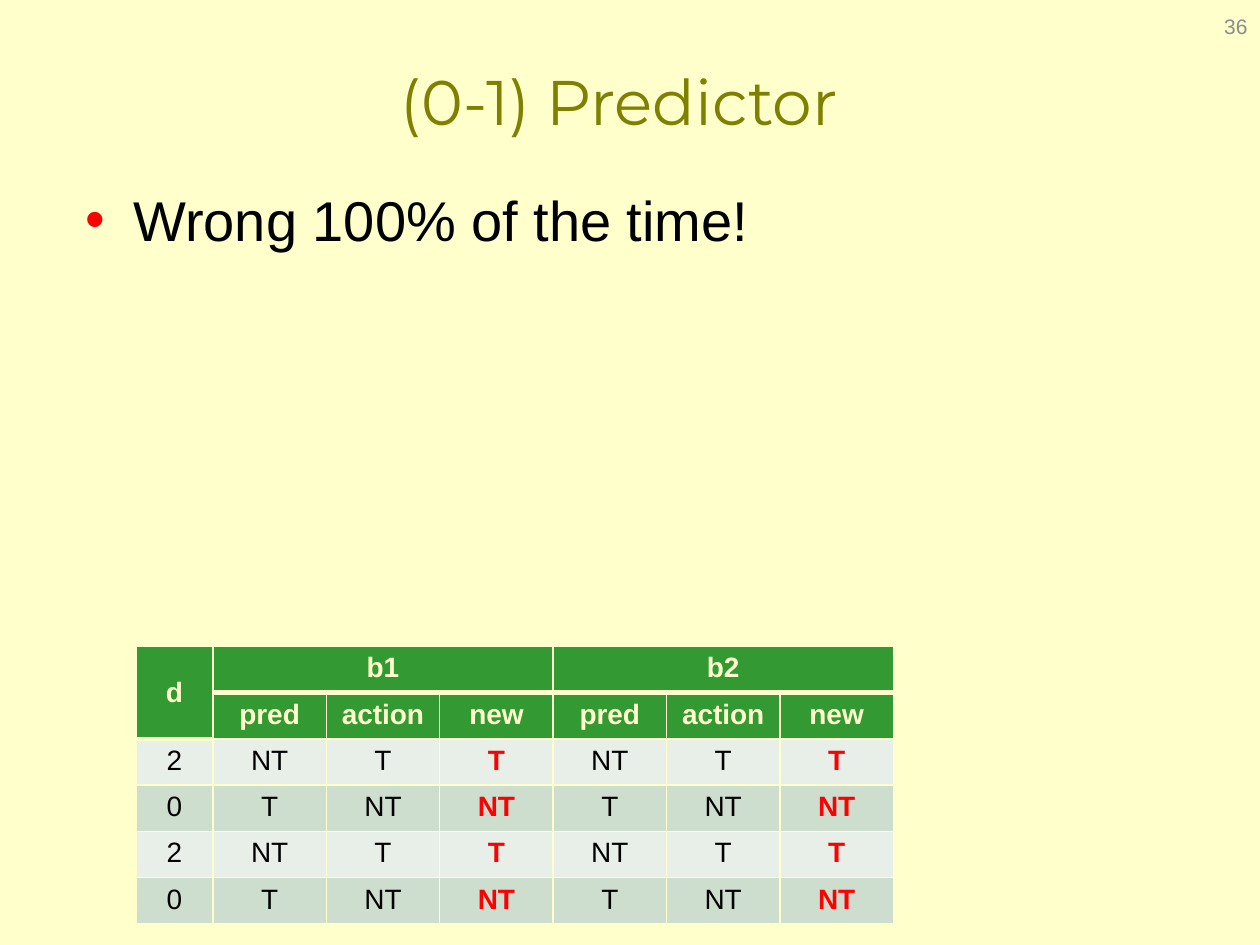
from dataclasses import dataclass

from lxml.etree import SubElement
from pptx import Presentation
from pptx.dml.color import RGBColor
from pptx.enum.text import MSO_ANCHOR as Anchor, PP_ALIGN as Align
from pptx.oxml.ns import qn
from pptx.util import Inches, Pt

COLORS = {
    "background": "FFFFCC",
    "title": "808000",
    "body": "000000",
    "accent": "FF0000",
    "number": "8C8C8C",
    "header": "339933",
    "light": "E8EFE8",
    "dark": "CEDECE",
}
COLUMN_WIDTHS = [0.61] + [0.9] * 6
ROW_HEIGHT = 0.34
OUTCOMES = {"2": ["NT", "T", "T"], "0": ["T", "NT", "NT"]}
ROWS = [
    ["d", "b1", "", "", "b2", "", ""],
    [""] + ["pred", "action", "new"] * 2,
] + [[distance] + OUTCOMES[distance] * 2 for distance in "2020"]
MERGES = [((0, 0), (1, 0)), ((0, 1), (0, 3)), ((0, 4), (0, 6))]
HEADER_ROWS = 2


@dataclass(frozen=True)
class Box:
    left: float
    top: float
    width: float
    height: float

    def lengths(self) -> list:
        return [Inches(n) for n in (self.left, self.top, self.width, self.height)]


@dataclass(frozen=True)
class Style:
    size: float
    color: str
    font: str = "Arial"
    bold: bool = False
    align: Align = Align.LEFT
    anchor: Anchor = Anchor.TOP


def color(name: str) -> RGBColor:
    return RGBColor.from_string(COLORS[name])


def write(text_frame, text: str, style: Style):
    text_frame.text = text
    paragraph = text_frame.paragraphs[0]
    paragraph.alignment = style.align
    for run in paragraph.runs:
        run.font.size = Pt(style.size)
        run.font.name = style.font
        run.font.bold = style.bold
        run.font.color.rgb = color(style.color)
    return paragraph


def fill_box(shape, box: Box, text: str, style: Style):
    shape.left, shape.top, shape.width, shape.height = box.lengths()
    shape.text_frame.word_wrap = True
    shape.text_frame.vertical_anchor = style.anchor
    return write(shape.text_frame, text, style)


def add_text(slide, box: Box, text: str, style: Style):
    return fill_box(slide.shapes.add_textbox(*box.lengths()), box, text, style)


def add_bullet(paragraph, indent: float) -> None:
    properties = paragraph._p.get_or_add_pPr()
    properties.set("marL", str(Inches(indent)))
    properties.set("indent", str(-Inches(indent)))
    spacing = SubElement(properties, qn("a:spcBef"))
    SubElement(spacing, qn("a:spcPct"), val="20000")
    bullet_color = SubElement(properties, qn("a:buClr"))
    SubElement(bullet_color, qn("a:srgbClr"), val=COLORS["accent"])
    SubElement(properties, qn("a:buFont"), typeface="Arial")
    SubElement(properties, qn("a:buChar"), char="•")


def add_borders(cell, top: float, bottom: float) -> None:
    properties = cell._tc.get_or_add_tcPr()
    for side, width in {"L": 1, "R": 1, "T": top, "B": bottom}.items():
        line = SubElement(properties, qn(f"a:ln{side}"), w=str(Pt(width)))
        fill = SubElement(line, qn("a:solidFill"))
        SubElement(fill, qn("a:srgbClr"), val=COLORS["background"])


def is_thick_below(row: int, column: int) -> bool:
    return row == (1 if column == 0 else 0)


def cell_look(row: int, column: int) -> tuple[str, Style]:
    if row < HEADER_ROWS:
        anchor = Anchor.MIDDLE if column == 0 else Anchor.TOP
        return "header", Style(16, "background", bold=True, align=Align.CENTER, anchor=anchor)
    is_new = column in (3, 6)
    text_color = "accent" if is_new else "body"
    return ("dark" if row % 2 else "light"), Style(16, text_color, bold=is_new, align=Align.CENTER)


def add_prediction_table(slide, left: float, top: float) -> None:
    box = Box(left, top, sum(COLUMN_WIDTHS), ROW_HEIGHT * len(ROWS))
    table = slide.shapes.add_table(len(ROWS), len(COLUMN_WIDTHS), *box.lengths()).table
    for column, width in zip(table.columns, COLUMN_WIDTHS):
        column.width = Inches(width)
    for row in table.rows:
        row.height = Inches(ROW_HEIGHT)
    for start, end in MERGES:
        table.cell(*start).merge(table.cell(*end))
    for row, values in enumerate(ROWS):
        for column, text in enumerate(values):
            cell = table.cell(row, column)
            fill, style = cell_look(row, column)
            add_borders(
                cell,
                top=3 if is_thick_below(row - 1, column) else 1,
                bottom=3 if is_thick_below(row, column) or (row, column) == (0, 0) else 1,
            )
            cell.fill.solid()
            cell.fill.fore_color.rgb = color(fill)
            cell.vertical_anchor = style.anchor
            if text:
                write(cell.text_frame, text, style)


def main() -> None:
    presentation = Presentation()
    presentation.slide_width, presentation.slide_height = Inches(10), Inches(7.5)
    slide = presentation.slides.add_slide(presentation.slide_layouts[5])
    slide.background.fill.solid()
    slide.background.fill.fore_color.rgb = color("background")

    title_style = Style(36, "title", "Montserrat", align=Align.CENTER, anchor=Anchor.MIDDLE)
    fill_box(slide.shapes.title, Box(0.58, 0.17, 8.67, 1.25), "(0-1) Predictor", title_style)
    body = add_text(slide, Box(0.58, 1.42, 8.67, 5.75), "Wrong 100% of the time!", Style(32, "body"))
    add_bullet(body, 0.38)
    add_prediction_table(slide, 1.08, 5.13)
    number_style = Style(12, "number", align=Align.RIGHT, anchor=Anchor.MIDDLE)
    add_text(slide, Box(7.67, 0.01, 2.33, 0.4), "36", number_style)
    presentation.save("out.pptx")


if __name__ == "__main__":
    main()
